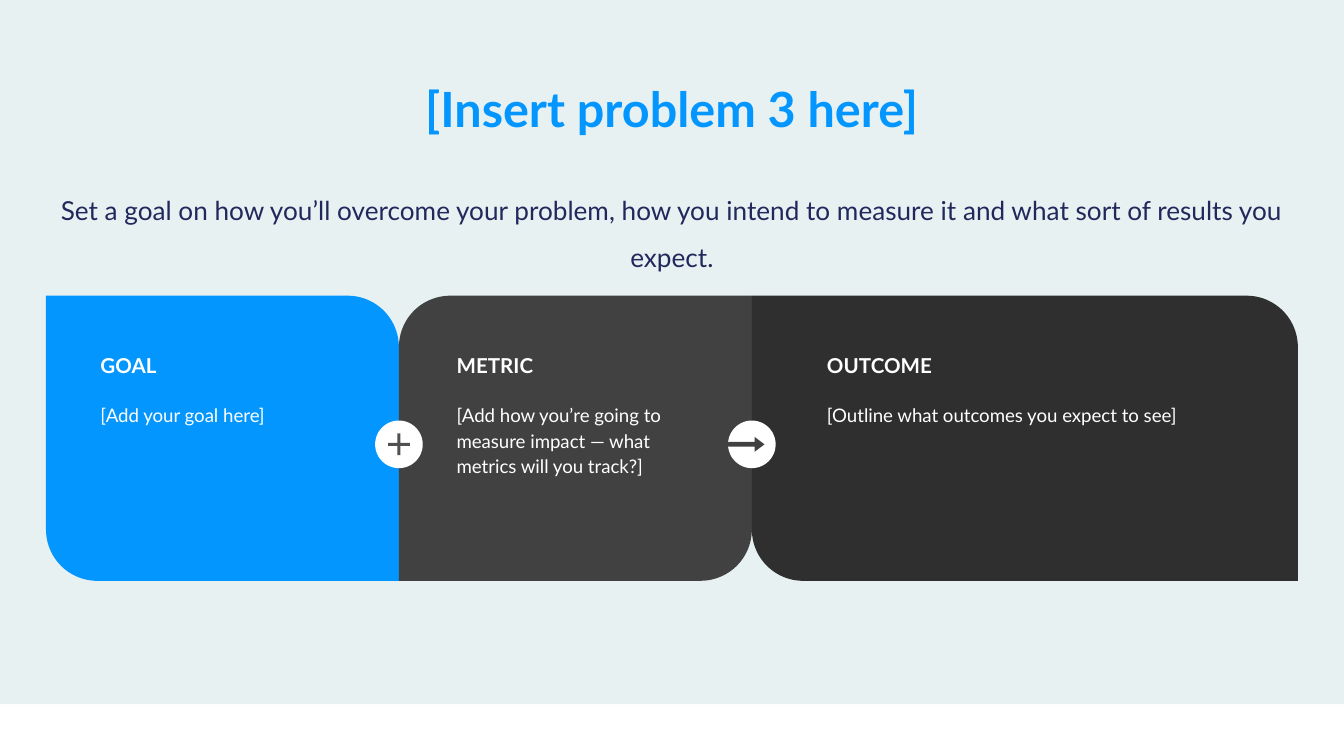
from pptx import Presentation
from pptx.dml.color import RGBColor
from pptx.enum.shapes import MSO_SHAPE
from pptx.enum.text import MSO_ANCHOR, MSO_AUTO_SIZE, PP_ALIGN
from pptx.util import Cm, Pt

DIAGONAL, OVAL = MSO_SHAPE.ROUND_2_DIAG_RECTANGLE, MSO_SHAPE.OVAL
RECTANGLE, PLUS, ARROW = MSO_SHAPE.RECTANGLE, MSO_SHAPE.MATH_PLUS, MSO_SHAPE.RIGHT_ARROW
LEFT, CENTER = PP_ALIGN.LEFT, PP_ALIGN.CENTER
TOP, NO_AUTOFIT = MSO_ANCHOR.TOP, MSO_AUTO_SIZE.NONE

COLORS = {
    "panel": "E8F1F2", "blue": "0496FF", "navy": "21295C", "white": "FFFFFF",
    "gray": "414141", "charcoal": "2F2F2F", "plus": "505050",
}

prs = Presentation()
prs.slide_width, prs.slide_height = Cm(25.4), Cm(14.29)
slide = prs.slides.add_slide(prs.slide_layouts[5])
shapes = slide.shapes


def add_filled(kind, left, top, width, height, color, adjustments=()):
    shape = shapes.add_shape(kind, Cm(left), Cm(top), Cm(width), Cm(height))
    shape.shadow.inherit = False
    shape.fill.solid()
    shape.fill.fore_color.rgb = RGBColor.from_string(COLORS[color])
    shape.line.fill.background()
    for i, value in enumerate(adjustments):
        shape.adjustments[i] = value
    return shape


def write(box, text, size, color, bold=False, align=LEFT, spacing=1.0, after=0):
    """Put one formatted paragraph into a text box or placeholder."""
    frame = box.text_frame
    frame_format = {
        "word_wrap": True, "auto_size": NO_AUTOFIT, "vertical_anchor": TOP,
        "margin_left": Cm(0.25), "margin_right": Cm(0.25),
        "margin_top": Cm(0.25), "margin_bottom": Cm(0.25),
    }
    for name, value in frame_format.items():
        setattr(frame, name, value)
    paragraph = frame.paragraphs[0]
    paragraph.text = text
    paragraph_format = {"alignment": align, "line_spacing": spacing,
                        "space_before": Pt(0), "space_after": Pt(after)}
    for name, value in paragraph_format.items():
        setattr(paragraph, name, value)
    font = paragraph.runs[0].font
    for name, value in {"name": "Lato", "size": Pt(size), "bold": bold}.items():
        setattr(font, name, value)
    font.color.rgb = RGBColor.from_string(COLORS[color])


# Pale panel, sent behind the title
panel = add_filled(RECTANGLE, 0, 0, 25.4, 13.31, "panel")
shapes.element.insert(2, panel.element)

MARGIN, CONTENT_WIDTH = 0.87, 23.66
title = shapes.title
title.left, title.top, title.width, title.height = (
    Cm(MARGIN), Cm(1.24), Cm(CONTENT_WIDTH), Cm(1.6))
write(title, "[Insert problem 3 here]", 26, "blue", bold=True, align=CENTER)

intro = shapes.add_textbox(Cm(MARGIN), Cm(3.12), Cm(CONTENT_WIDTH), Cm(1.24))
write(intro, "Set a goal on how you’ll overcome your problem, how you intend to "
      "measure it and what sort of results you expect.",
      14, "navy", align=CENTER, spacing=1.5)

# Cards: heading, body, width, text inset, text width, color, rounded corners
CARD_TOP, CARD_HEIGHT, ROUND = 5.59, 5.39, 0.18
cards = [
    ("GOAL", "[Add your goal here]", 6.67, 0.78, 4.98, "blue", (0, ROUND)),
    ("METRIC", "[Add how you’re going to measure impact — what metrics will you track?]",
     6.67, 0.84, 4.98, "gray", (ROUND, 0)),
    ("OUTCOME", "[Outline what outcomes you expect to see]",
     10.32, 1.17, 8.31, "charcoal", (0, ROUND)),
]
card_left = MARGIN
joints = []
for heading, body, width, inset, text_width, color, corners in cards:
    add_filled(DIAGONAL, card_left, CARD_TOP, width, CARD_HEIGHT, color, corners)
    text_left = Cm(card_left + inset)
    heading_box = shapes.add_textbox(text_left, Cm(6.43), Cm(text_width), Cm(0.89))
    write(heading_box, heading, 11, "white", bold=True)
    body_box = shapes.add_textbox(text_left, Cm(7.32), Cm(text_width), Cm(2.44))
    write(body_box, body, 10, "white", spacing=1.15, after=16)
    card_left += width
    joints.append(card_left)

# Round badges centred on the joints between cards
BADGE, PLUS_SIZE, ARROW_HEIGHT, BADGE_MIDDLE = 0.9, 0.56, 0.28, 8.4
plus_joint, arrow_joint = joints[:2]
for joint in (plus_joint, arrow_joint):
    add_filled(OVAL, joint - BADGE / 2, BADGE_MIDDLE - BADGE / 2, BADGE, BADGE, "white")
add_filled(PLUS, plus_joint - PLUS_SIZE / 2, BADGE_MIDDLE - PLUS_SIZE / 2,
           PLUS_SIZE, PLUS_SIZE, "plus", (0.1,))
add_filled(ARROW, arrow_joint - BADGE / 2, BADGE_MIDDLE - ARROW_HEIGHT / 2,
           0.69, ARROW_HEIGHT, "gray", (0.32, 0.67))

prs.save("out.pptx")
